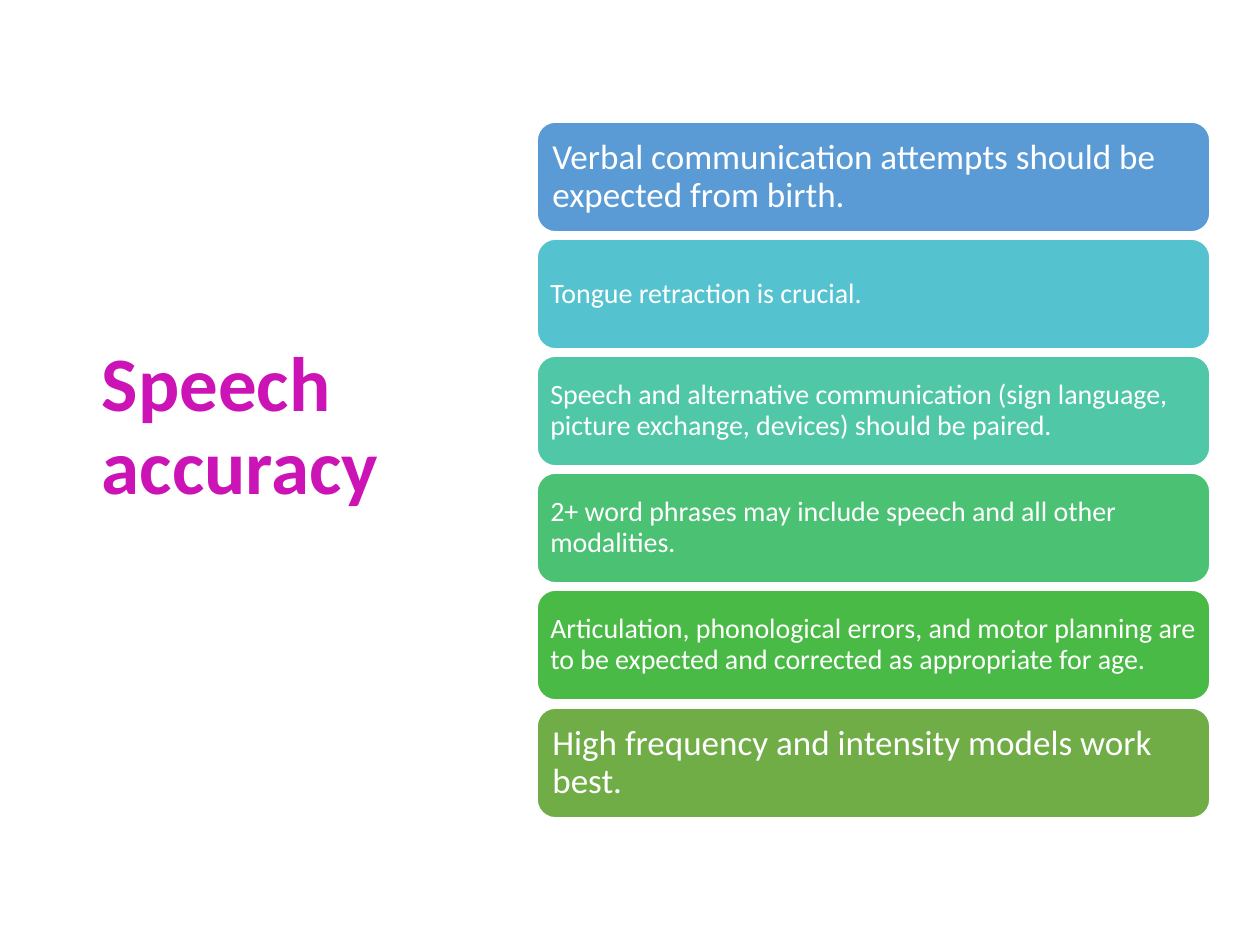
from pptx import Presentation
from pptx.dml.color import RGBColor
from pptx.enum.shapes import MSO_SHAPE
from pptx.enum.text import MSO_ANCHOR, PP_ALIGN
from pptx.util import Emu, Pt


def px(length):
    return Emu(round(length * 914400 / 126))


def write(shape, text, size, color, margins, bold=False):
    frame = shape.text_frame
    frame.text = text
    frame.word_wrap = True
    frame.vertical_anchor = MSO_ANCHOR.MIDDLE
    (frame.margin_left, frame.margin_top,
     frame.margin_right, frame.margin_bottom) = [px(margin) for margin in margins]
    para = frame.paragraphs[0]
    para.alignment = PP_ALIGN.LEFT
    para.line_spacing = 0.9
    font = para.runs[0].font
    font.name = "Calibri"
    font.size = Pt(size)
    font.bold = bold
    font.color.rgb = RGBColor.from_string(color)


deck = Presentation()
deck.slide_width, deck.slide_height = px(1260), px(945)
page = deck.slides.add_slide(deck.slide_layouts[6])

# Title, raised above the middle by a deep bottom margin
title = page.shapes.add_textbox(px(89), px(140), px(353), px(660))
write(title, "Speech accuracy", 44, "CC13B6", (13, 6, 13, 90), bold=True)

# Stack of statements: text, fill, text size, margin
statements = [
    ("Verbal communication attempts should be expected from birth.", "5B9BD5", 20, 10),
    ("Tongue retraction is crucial.", "55C3CF", 16, 8),
    ("Speech and alternative communication (sign language, picture exchange, "
     "devices) should be paired.", "50C8A7", 16, 8),
    ("2+ word phrases may include speech and all other modalities.", "4BC174", 16, 8),
    ("Articulation, phonological errors, and motor planning are to be expected "
     "and corrected as appropriate for age.", "4ABA46", 16, 8),
    ("High frequency and intensity models work best.", "70AD47", 20, 10),
]
first_top, last_top = 122, 708
for index, (text, fill, size, margin) in enumerate(statements):
    top = first_top + (last_top - first_top) * index // (len(statements) - 1)
    box = page.shapes.add_shape(MSO_SHAPE.ROUNDED_RECTANGLE,
                                px(537), px(top), px(673), px(110))
    box.shadow.inherit = False
    box.fill.solid()
    box.fill.fore_color.rgb = RGBColor.from_string(fill)
    box.line.color.rgb = RGBColor.from_string("FFFFFF")
    box.line.width = Pt(1)
    write(box, text, size, "FFFFFF", [margin] * 4)

deck.save("out.pptx")
